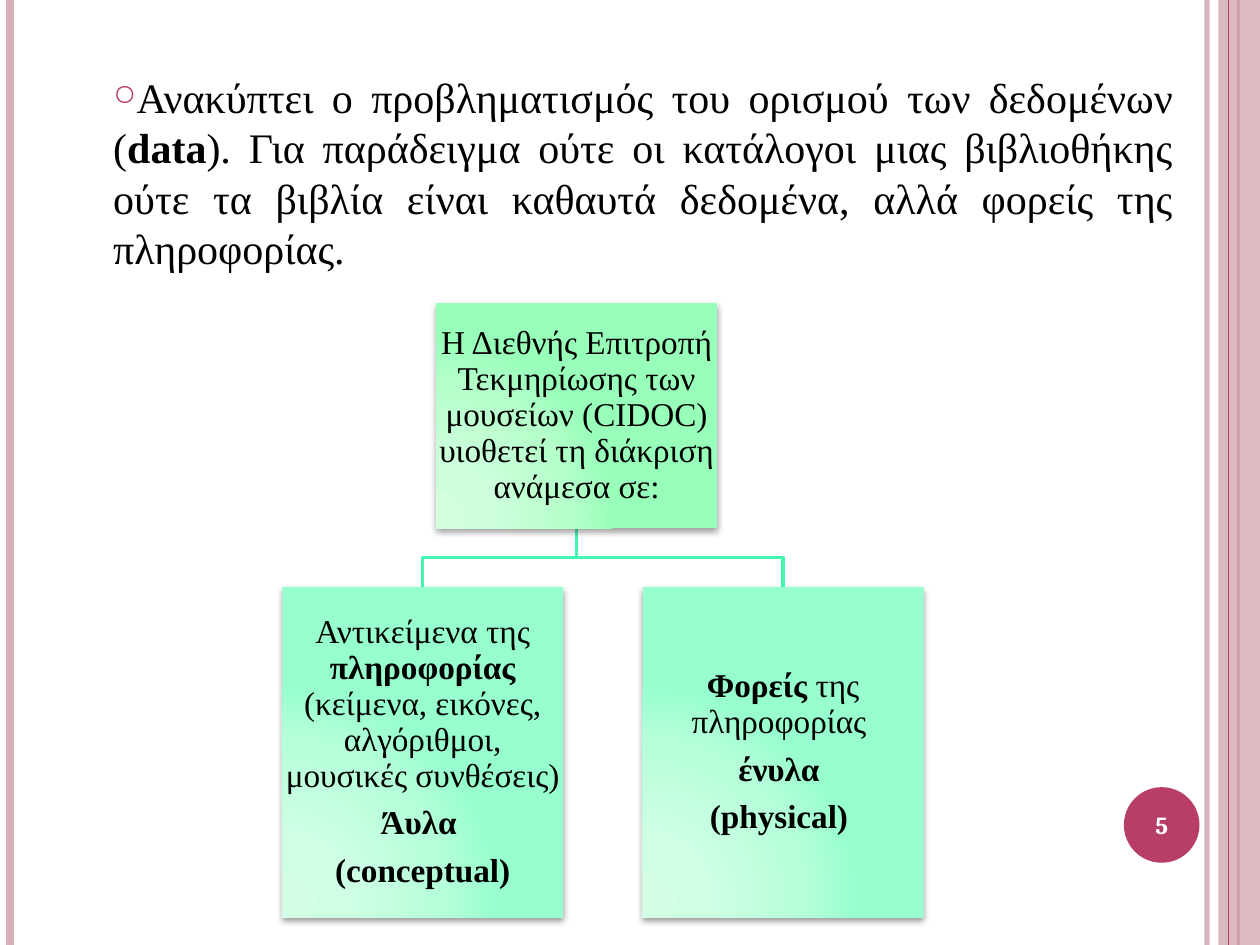
from dataclasses import dataclass

from lxml import etree
from pptx import Presentation
from pptx.dml.color import RGBColor
from pptx.enum.shapes import MSO_CONNECTOR, MSO_SHAPE
from pptx.enum.text import MSO_ANCHOR, PP_ALIGN
from pptx.oxml.ns import qn
from pptx.util import Inches, Pt

STRAIGHT = MSO_CONNECTOR.STRAIGHT
RECTANGLE, OVAL = MSO_SHAPE.RECTANGLE, MSO_SHAPE.OVAL
TOP, MIDDLE = MSO_ANCHOR.TOP, MSO_ANCHOR.MIDDLE
CENTER, JUSTIFY = PP_ALIGN.CENTER, PP_ALIGN.JUSTIFY


@dataclass(frozen=True)
class Theme:
    accent: str = "B83D68"
    pale: str = "D8AFB9"
    ink: str = "000000"
    white: str = "FFFFFF"
    branch: str = "42F6B1"
    root_stops: tuple = ("D3FFDF", "CEFFDC", "B4FFCA", "97FFB9")
    leaf_stops: tuple = ("D3FFE7", "CEFFE5", "B4FFD9", "97FFCD")
    serif: str = "Times New Roman"
    number_font: str = "Cambria"
    body_size: int = 24
    node_size: int = 19
    number_size: int = 14


THEME = Theme()


@dataclass(frozen=True)
class Box:
    left: int
    top: int
    width: int
    height: int

    def inner(self, left, top, width, height):
        """Return an inner box, given in percent of this one."""
        return Box(int(self.left + self.width * left / 100),
                   int(self.top + self.height * top / 100),
                   int(self.width * width / 100),
                   int(self.height * height / 100))

    @property
    def frame(self):
        return self.left, self.top, self.width, self.height

    @property
    def center(self):
        return self.left + self.width // 2

    @property
    def bottom(self):
        return self.top + self.height


def add_xml(parent, tag, **attributes):
    child = etree.SubElement(parent, qn(tag))
    for name, value in attributes.items():
        child.set(name, str(value))
    return child


def set_alpha(fill_owner, percent):
    color = next(fill_owner.iter(qn("a:srgbClr")))
    add_xml(color, "a:alpha", val=percent * 1000)


def add_span(para, text, *, size, font=THEME.serif, color=THEME.ink, bold=False):
    span = para.add_run()
    span.text = text
    span.font.size = Pt(size)
    span.font.name = font
    span.font.bold = bold
    span.font.color.rgb = RGBColor.from_string(color)


def write(shape, paragraphs, *, align=CENTER, anchor=MIDDLE, inset=0.01,
          line_spacing=None, before=0, after=0, **style):
    """Fill a shape with paragraphs, each a list of (text, bold) spans."""
    frame = shape.text_frame
    frame.word_wrap = True
    frame.vertical_anchor = anchor
    frame.margin_left = frame.margin_right = Inches(inset)
    frame.margin_top = frame.margin_bottom = Inches(min(inset, 0.05))
    for index, spans in enumerate(paragraphs):
        para = frame.add_paragraph() if index else frame.paragraphs[0]
        para.alignment = align
        para.line_spacing = line_spacing
        para.space_before, para.space_after = Pt(before), Pt(after)
        for text, bold in spans:
            add_span(para, text, bold=bold, **style)


def add_filled(page, kind, box, color):
    shape = page.shapes.add_shape(kind, *box.frame)
    shape.shadow.inherit = False
    shape.fill.solid()
    shape.fill.fore_color.rgb = RGBColor.from_string(color)
    shape.line.fill.background()
    return shape


def add_rule(page, box, share, color, width):
    """Draw a full-height vertical line at a percentage of the box width."""
    place = box.inner(share, 0, 0, 100)
    rule = page.shapes.add_connector(STRAIGHT, place.left, place.top,
                                     place.left, place.bottom)
    rule.line.color.rgb = RGBColor.from_string(color)
    rule.line.width = Pt(width)
    add_xml(rule._element.spPr, "a:effectLst")
    return rule


def draw_border(page, box):
    inside = add_rule(page, box, 95.8, THEME.pale, 3)
    set_alpha(inside._element.spPr, 93)
    add_rule(page, box, 0.8, THEME.pale, 4.5)
    add_rule(page, box, 98.3, THEME.accent, 1.5)
    band = add_filled(page, RECTANGLE, box.inner(96.7, 0, 3.3, 100), THEME.pale)
    set_alpha(band._element.spPr, 87)
    add_rule(page, box, 97.5, THEME.accent, 0.75)


def draw_number(page, box, number):
    badge = add_filled(page, OVAL, box, THEME.accent)
    write(badge, [[(number, True)]], size=THEME.number_size,
          font=THEME.number_font, color=THEME.white)


def draw_body(page, box, spans):
    body = page.shapes.add_textbox(*box.frame)
    write(body, [spans], align=JUSTIFY, anchor=TOP, inset=0.1,
          before=6, after=6, size=THEME.body_size)
    settings = body.text_frame.paragraphs[0]._p.get_or_add_pPr()
    settings.set("marL", str(Inches(0.3)))
    settings.set("indent", "0")
    add_xml(add_xml(settings, "a:buClr"), "a:srgbClr", val=THEME.accent)
    add_xml(settings, "a:buSzPct", val=70000)
    add_xml(settings, "a:buChar", char="○")


def draw_branch(page, parent, child):
    middle = (parent.bottom + child.top) // 2
    builder = page.shapes.build_freeform(parent.center, parent.bottom)
    builder.add_line_segments([(parent.center, middle), (child.center, middle),
                               (child.center, child.top)], close=False)
    branch = builder.convert_to_shape()
    branch.shadow.inherit = False
    branch.fill.background()
    branch.line.color.rgb = RGBColor.from_string(THEME.branch)
    branch.line.width = Pt(2)


def draw_node(page, box, stops, paragraphs):
    """Draw a box with a radial gradient and a soft shadow below."""
    node = add_filled(page, RECTANGLE, box, stops[-1])
    properties = node._element.spPr
    solid = properties.find(qn("a:solidFill"))
    gradient = etree.Element(qn("a:gradFill"), rotWithShape="1")
    stop_list = add_xml(gradient, "a:gsLst")
    for position, color in zip((0, 30, 75, 100), stops):
        stop = add_xml(stop_list, "a:gs", pos=position * 1000)
        add_xml(stop, "a:srgbClr", val=color)
    radial = add_xml(gradient, "a:path", path="circle")
    add_xml(radial, "a:fillToRect", l=5000, t=100000, r=120000, b=10000)
    properties.replace(solid, gradient)
    shadow = add_xml(properties.find(qn("a:effectLst")), "a:outerShdw",
                     blurRad=Pt(4), dist=Pt(2), dir=90 * 60000, rotWithShape=0)
    add_xml(shadow, "a:srgbClr", val=THEME.ink)
    set_alpha(shadow, 40)
    write(node, paragraphs, line_spacing=0.9, after=0.35 * THEME.node_size,
          size=THEME.node_size)


def draw_tree(page, box, root_text, leaf_texts):
    root = box.inner(24, 0, 43.8, 36.6)
    leaves = [box.inner(left, 46.2, 43.8, 53.8) for left in (0, 56.2)]
    for leaf in reversed(leaves):
        draw_branch(page, root, leaf)
    draw_node(page, root, THEME.root_stops, root_text)
    for leaf, text in zip(leaves, leaf_texts):
        draw_node(page, leaf, THEME.leaf_stops, text)


def main():
    deck = Presentation()
    deck.slide_width, deck.slide_height = Inches(10), Inches(7.5)
    page = deck.slides.add_slide(deck.slide_layouts[6])
    full = Box(0, 0, deck.slide_width, deck.slide_height)
    draw_border(page, full)
    draw_number(page, full.inner(89.2, 83.3, 6, 8), "5")
    draw_body(page, full.inner(5, 6.9, 89.1, 87.5), [
        ("Ανακύπτει ο προβληματισμός του ορισμού των δεδομένων (", False),
        ("data", True),
        ("). Για παράδειγμα ούτε οι κατάλογοι μιας βιβλιοθήκης ούτε τα βιβλία "
         "είναι καθαυτά δεδομένα, αλλά φορείς της πληροφορίας.", False)])
    draw_tree(
        page, full.inner(22.4, 32.1, 50.9, 65),
        [[("Η Διεθνής Επιτροπή Τεκμηρίωσης των μουσείων (CIDOC) "
           "υιοθετεί τη διάκριση ανάμεσα σε:", False)]],
        [[[("Αντικείμενα της ", False), ("πληροφορίας", True),
           (" (κείμενα, εικόνες, αλγόριθμοι, μουσικές συνθέσεις) ", False)],
          [("Άυλα ", True)], [("(conceptual)", True)]],
         [[("Φορείς", True), (" της πληροφορίας ", False)],
          [("ένυλα ", True)], [("(physical) ", True)]]])
    deck.save("out.pptx")


if __name__ == "__main__":
    main()
